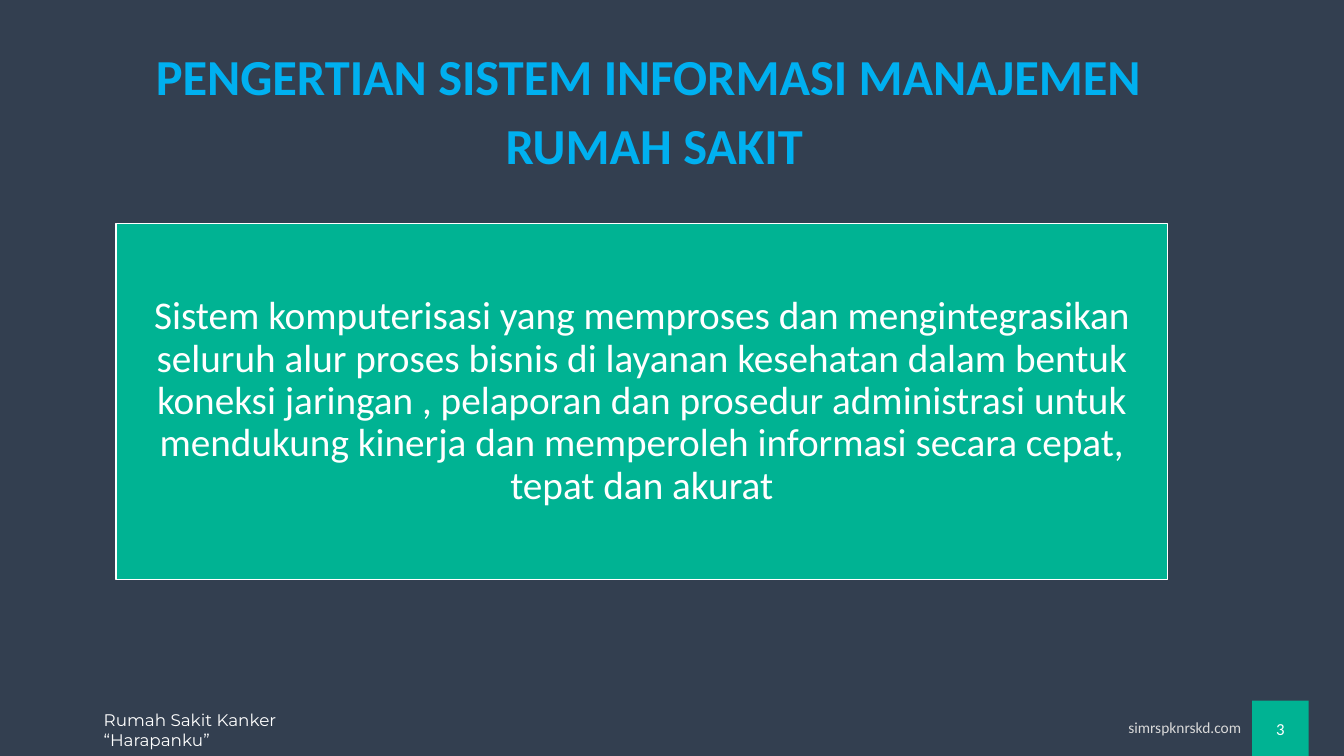
from pptx import Presentation
from pptx.dml.color import RGBColor
from pptx.enum.shapes import MSO_SHAPE
from pptx.enum.text import MSO_ANCHOR, PP_ALIGN
from pptx.util import Inches, Pt

RECT = MSO_SHAPE.RECTANGLE
LEFT, CENTER, RIGHT = PP_ALIGN.LEFT, PP_ALIGN.CENTER, PP_ALIGN.RIGHT
TOP, MIDDLE = MSO_ANCHOR.TOP, MSO_ANCHOR.MIDDLE
COLORS = {"bg": "333F50", "green": "00B393", "blue": "00B0F0",
          "white": "FFFFFF", "grey": "D9D9D9"}


class SlideBuilder:
    """Holds the style and the current slide and adds elements to it."""

    font = "Calibri"

    def __init__(self, prs):
        self.s = prs.slides.add_slide(prs.slide_layouts[6])
        fill = self.s.background.fill
        fill.solid()
        fill.fore_color.rgb = self.color("bg")

    def color(self, name):
        return RGBColor.from_string(COLORS[name])

    def set_text(self, sp, lines, size, color="white", align=LEFT, anchor=TOP,
                 bold=False, font=None, spacing=1.0, gap=0, inset=None):
        tf = sp.text_frame
        tf.text = "\n".join(lines)
        tf.word_wrap = True
        tf.vertical_anchor = anchor
        if inset is not None:
            tf.margin_left = tf.margin_right = Inches(inset)
            tf.margin_top = tf.margin_bottom = Inches(inset)
        for i, p in enumerate(tf.paragraphs):
            p.alignment = align
            p.line_spacing = spacing
            p.space_before = Pt(gap if i else 0)
            for r in p.runs:
                r.font.name = font or self.font
                r.font.size = Pt(size)
                r.font.bold = bold
                r.font.color.rgb = self.color(color)

    def text(self, box, lines, size, **style):
        sp = self.s.shapes.add_textbox(*map(Inches, box))
        self.set_text(sp, lines, size, **style)

    def panel(self, box, lines, size, line=None, **style):
        sp = self.s.shapes.add_shape(RECT, *map(Inches, box))
        sp.shadow.inherit = False
        sp.fill.solid()
        sp.fill.fore_color.rgb = self.color("green")
        if line:
            sp.line.color.rgb = self.color(line)
            sp.line.width = Pt(1)
        else:
            sp.line.fill.background()
        self.set_text(sp, lines, size, align=CENTER, anchor=MIDDLE, **style)


def main():
    prs = Presentation()
    prs.slide_width, prs.slide_height = Inches(13.33), Inches(7.5)
    slide = SlideBuilder(prs)

    slide.panel((12.42, 6.95, 0.56, 0.55), ["3"], 12)
    slide.text((10.37, 7.11, 2.04, 0.23), ["simrspknrskd.com"], 11,
               color="grey", align=RIGHT, anchor=MIDDLE, spacing=0.9)
    slide.text((0.93, 6.99, 2.87, 0.3), ["Rumah Sakit Kanker “Harapanku”"], 12,
               font="Montserrat")
    slide.text((0.74, 0.47, 11.5, 1.03),
               ["PENGERTIAN SISTEM INFORMASI MANAJEMEN ", "RUMAH SAKIT"], 36,
               color="blue", align=CENTER, bold=True, spacing=0.9, gap=10)
    slide.panel((1.15, 2.22, 10.43, 3.53),
                ["Sistem komputerisasi yang memproses dan mengintegrasikan "
                 "seluruh alur proses bisnis di layanan kesehatan dalam bentuk "
                 "koneksi jaringan , pelaporan dan prosedur administrasi untuk "
                 "mendukung kinerja dan memperoleh informasi secara cepat, "
                 "tepat dan akurat"], 28,
                line="white", spacing=0.9, inset=0.02)

    prs.save("out.pptx")


if __name__ == "__main__":
    main()
